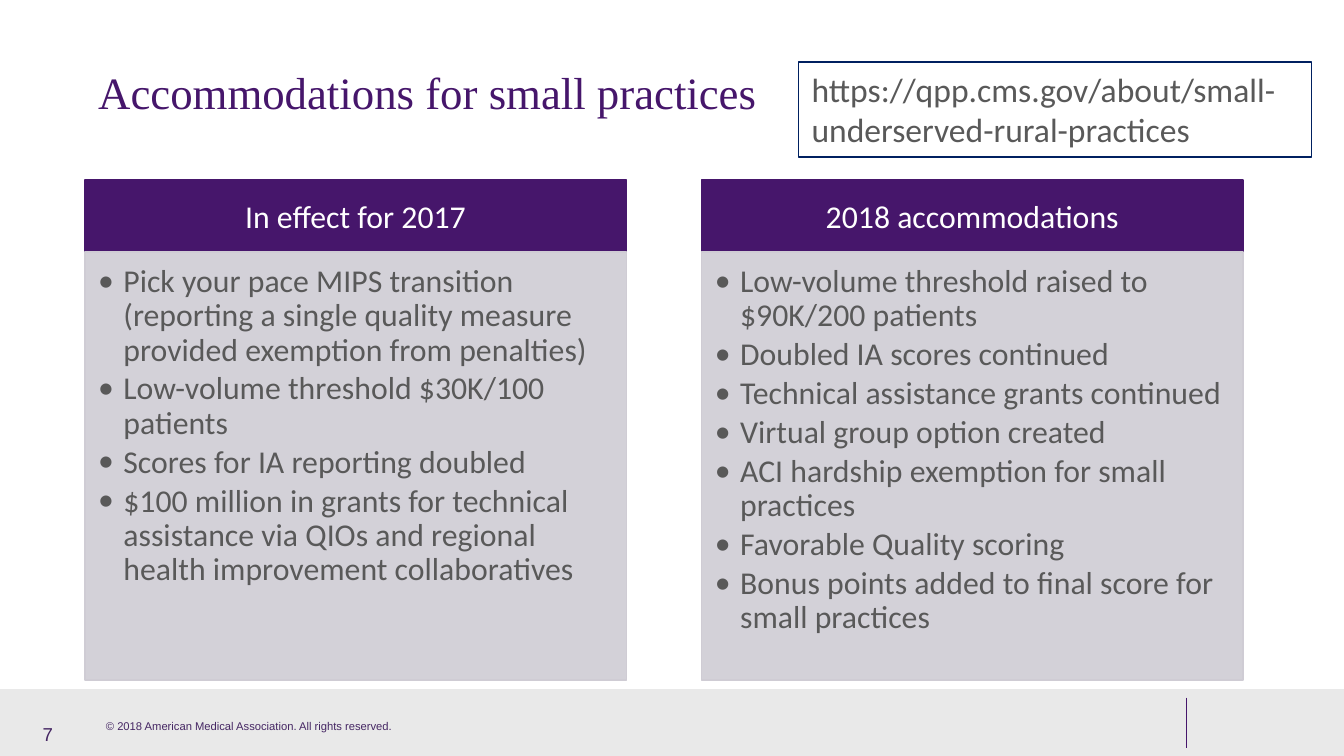
"""Build the slide on accommodations for small practices."""
from dataclasses import dataclass
from typing import Any

import pptx
import pptx.dml.color
import pptx.enum.shapes
import pptx.enum.text
import pptx.oxml
import pptx.oxml.ns
import pptx.util

Pt = pptx.util.Pt
ALIGN = pptx.enum.text.PP_ALIGN
ANCHOR = pptx.enum.text.MSO_ANCHOR
PURPLE, FOOTER_PURPLE, GRAY = "46166B", "452663", "595959"
PANEL, BAND, NAVY, WHITE = "CFCCD4", "E0E0E0", "002060", "FFFFFF"
COMPARISON_LAYOUT = 4
COLUMN_LEFT, COLUMN_STEP, COLUMN_WIDTH = 45.4, 330.4, 290.2
HEADER_TOP, HEADER_HEIGHT = 96.5, 38.5
BODY_TOP, BODY_HEIGHT = 134.8, 229.7


@dataclass(frozen=True)
class Frame:
    """Position and size in points."""
    left: float
    top: float
    width: float
    height: float

    def lengths(self) -> tuple[int, ...]:
        return tuple(Pt(v) for v in (self.left, self.top, self.width, self.height))


@dataclass(frozen=True)
class Style:
    """Font settings of a text."""
    font: str
    size: float
    color: str


@dataclass(frozen=True)
class Column:
    """A heading with its list."""
    heading: str
    items: tuple[str, ...]


COLUMNS = (
    Column("In effect for 2017", (
        "Pick your pace MIPS transition (reporting a single quality measure "
        "provided exemption from penalties)",
        "Low-volume threshold $30K/100 patients",
        "Scores for IA reporting doubled",
        "$100 million in grants for technical assistance via QIOs and regional "
        "health improvement collaboratives",
    )),
    Column("2018 accommodations", (
        "Low-volume threshold raised to $90K/200 patients",
        "Doubled IA scores continued",
        "Technical assistance grants continued",
        "Virtual group option created",
        "ACI hardship exemption for small practices",
        "Favorable Quality scoring",
        "Bonus points added to final score for small practices",
    )),
)


def element(tag: str, **attributes: str) -> Any:
    """Make an empty drawing element."""
    node = pptx.oxml.parse_xml(f"<a:{tag} {pptx.oxml.ns.nsdecls('a')}/>")
    for name, value in attributes.items():
        node.set(name, value)
    return node


def paint(color_format: Any, color: str) -> None:
    """Apply a hex colour."""
    color_format.rgb = pptx.dml.color.RGBColor.from_string(color)


def fill_shape(shape: Any, color: str, opacity: int = 100) -> None:
    """Fill a shape, optionally translucent."""
    shape.fill.solid()
    paint(shape.fill.fore_color, color)
    if opacity < 100:
        color_node = shape.fill._xPr.find(".//" + pptx.oxml.ns.qn("a:srgbClr"))
        color_node.append(element("alpha", val=str(opacity * 1000)))


def outline(shape: Any, color: str, width: float) -> None:
    """Draw a line in the given colour and width."""
    paint(shape.line.color, color)
    shape.line.width = Pt(width)


def place(shape: Any, frame: Frame) -> None:
    """Move and size a shape."""
    shape.left, shape.top, shape.width, shape.height = frame.lengths()


def write(shape: Any, text: str, style: Style, anchor: Any = ANCHOR.TOP,
          align: Any = ALIGN.LEFT,
          insets: tuple[float, float, float, float] = (7.2, 3.6, 7.2, 3.6)) -> None:
    """Set the text of a shape and format its runs."""
    box = shape.text_frame
    box.text = text
    box.word_wrap = True
    box.auto_size = pptx.enum.text.MSO_AUTO_SIZE.NONE
    box.vertical_anchor = anchor
    box.margin_left, box.margin_top, box.margin_right, box.margin_bottom = map(Pt, insets)
    for para in box.paragraphs:
        para.alignment = align
        para.space_before = Pt(0)
        for span in para.runs:
            span.font.name = style.font
            span.font.size = Pt(style.size)
            span.font.bold = False
            paint(span.font.color, style.color)


def add_text(slide: Any, frame: Frame, text: str, style: Style,
             anchor: Any = ANCHOR.TOP) -> Any:
    """Add a text box."""
    box = slide.shapes.add_textbox(*frame.lengths())
    write(box, text, style, anchor)
    return box


def draw_column(header: Any, body: Any, column: Column, left: float) -> None:
    """Fill the heading and list placeholders of one column."""
    place(header, Frame(left, HEADER_TOP, COLUMN_WIDTH, HEADER_HEIGHT))
    fill_shape(header, PURPLE)
    outline(header, PURPLE, 1)
    write(header, column.heading, Style("Calibri", 17, WHITE), ANCHOR.MIDDLE,
          ALIGN.CENTER, (9.4, 5.8, 9.4, 5.8))
    place(body, Frame(left, BODY_TOP, COLUMN_WIDTH, BODY_HEIGHT))
    fill_shape(body, PANEL, 90)
    outline(body, PANEL, 1)
    write(body, "\n".join(column.items), Style("Calibri", 17, GRAY),
          insets=(7.2, 7.2, 9.4, 10.8))
    for para in body.text_frame.paragraphs:
        para.line_spacing = 0.9
        para.space_after = Pt(2.5)
        properties = para._p.get_or_add_pPr()
        properties.set("marL", str(Pt(13.5)))
        properties.set("indent", str(-Pt(13.5)))
        properties.append(element("buFont", typeface="Calibri"))
        properties.append(element("buChar", char="•"))


def draw_footer(slide: Any) -> None:
    """Draw the band, copyright line, divider and slide number."""
    band = slide.shapes.add_shape(pptx.enum.shapes.MSO_SHAPE.RECTANGLE,
                                  *Frame(0, 369.2, 720, 35.8).lengths())
    band.shadow.inherit = False
    fill_shape(band, BAND, 70)
    band.line.fill.background()
    add_text(slide, Frame(49.7, 381.6, 199, 14.4),
             "© 2018 American Medical Association. All rights reserved.",
             Style("Arial", 6, FOOTER_PURPLE))
    divider = slide.shapes.add_connector(pptx.enum.shapes.MSO_CONNECTOR.STRAIGHT,
                                         Pt(635.8), Pt(373.7), Pt(635.8), Pt(401))
    outline(divider, PURPLE, 0.5)
    divider._element.spPr.append(element("effectLst"))
    add_text(slide, Frame(15.8, 382.3, 72.7, 21.6), "7",
             Style("Arial", 10, FOOTER_PURPLE), ANCHOR.MIDDLE)


def main() -> None:
    """Build and save the deck."""
    deck = pptx.Presentation()
    deck.slide_width, deck.slide_height = Pt(720), Pt(405)
    slide = deck.slides.add_slide(deck.slide_layouts[COMPARISON_LAYOUT])
    title, *fields = slide.placeholders
    place(title, Frame(45.4, 13.7, 620.6, 70.6))
    write(title, "Accommodations for small practices",
          Style("Times New Roman", 24, PURPLE), ANCHOR.MIDDLE)
    for index, column in enumerate(COLUMNS):
        header, body = fields[2 * index:2 * index + 2]
        draw_column(header, body, column, COLUMN_LEFT + index * COLUMN_STEP)
    draw_footer(slide)
    link = add_text(slide, Frame(427.7, 33.3, 275, 50.9),
                    "https://qpp.cms.gov/about/small-underserved-rural-practices",
                    Style("Calibri", 18, GRAY))
    outline(link, NAVY, 0.75)
    deck.save("out.pptx")


if __name__ == "__main__":
    main()
